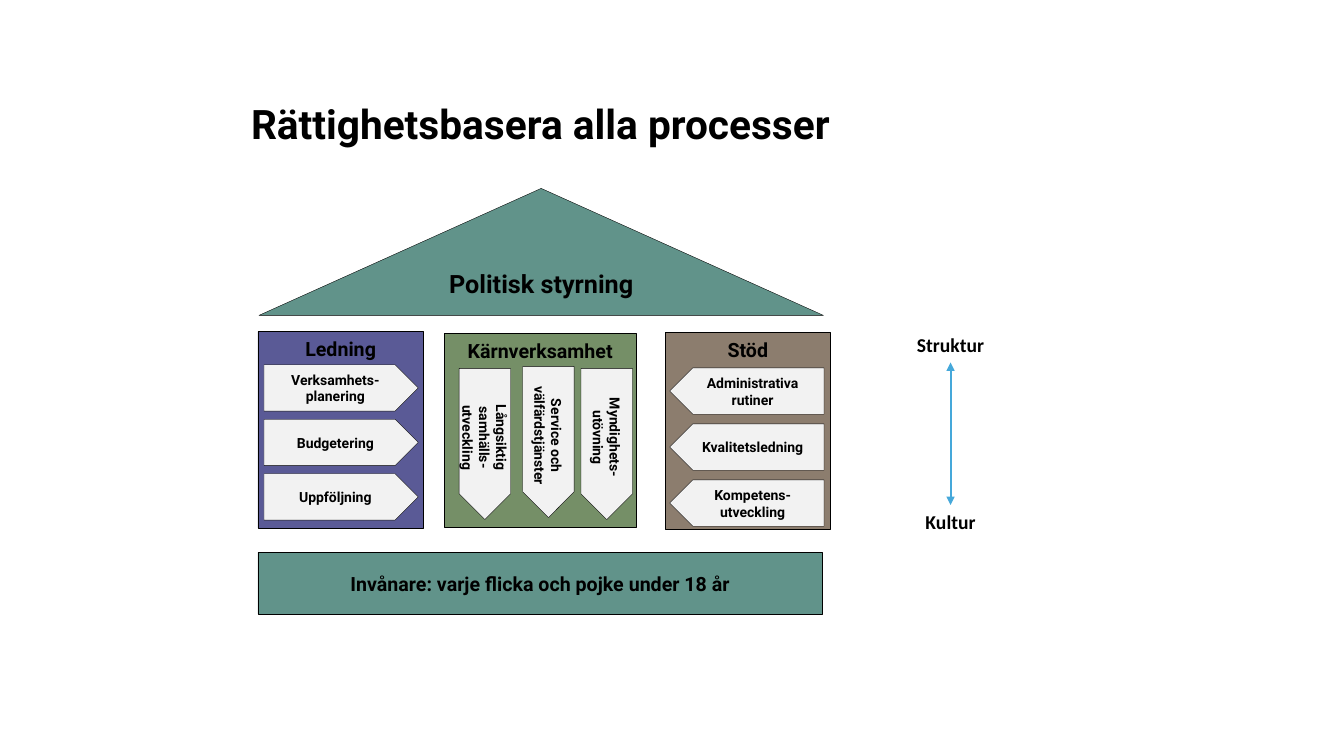
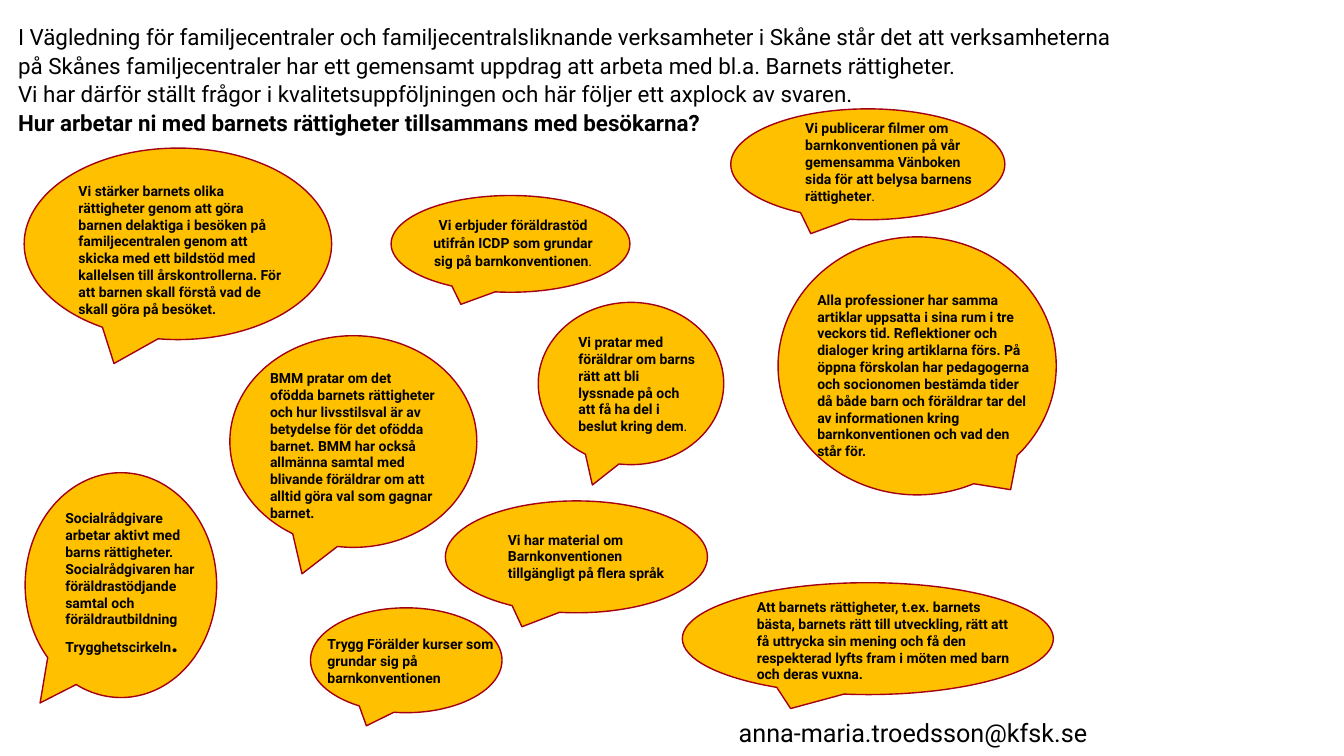
from lxml.etree import SubElement
from pptx import Presentation
from pptx.dml.color import RGBColor
from pptx.enum.shapes import MSO_CONNECTOR, MSO_SHAPE
from pptx.enum.text import MSO_ANCHOR, PP_ALIGN
from pptx.oxml.ns import qn
from pptx.util import Pt

BLACK = RGBColor(0x00, 0x00, 0x00)
TEAL = RGBColor(0x61, 0x93, 0x8A)
PURPLE = RGBColor(0x5A, 0x5A, 0x96)
GREEN = RGBColor(0x75, 0x8F, 0x67)
BROWN = RGBColor(0x8C, 0x7D, 0x6E)
PALE = RGBColor(0xF2, 0xF2, 0xF2)
BLUE = RGBColor(0x45, 0xA8, 0xDA)
YELLOW = RGBColor(0xFF, 0xC0, 0x00)
RED = RGBColor(0xA3, 0x00, 0x13)
FONT = "Roboto"

TITLE = "Rättighetsbasera alla processer"
ROOF = ("Politisk styrning", (185, 134.6, 403.2, 90.7))
BASE = ("Invånare: varje flicka och pojke under 18 år", (184.3, 394.6, 403.2, 43.9))
PILLARS = [
    ("Ledning", PURPLE, (184.3, 236.9, 118.1, 140.4)),
    ("Kärnverksamhet", GREEN, (317.5, 238.3, 136.8, 138.2)),
    ("Stöd", BROWN, (475.2, 237.6, 118.1, 140.4)),
]
PLATE_W, PLATE_H = 110.2, 33.1
SIDE_PLATES = [
    (188.6, 260.6, 38.9, False, ["Verksamhets-planering", "Budgetering", "Uppföljning"]),
    (478.4, 262.8, 40, True,
     ["Administrativa rutiner", "Kvalitetsledning", "Kompetens-utveckling"]),
]
DOWN_W, DOWN_H = 108, 36.7
DOWN_PLATES = [
    ("Långsiktig samhälls-utveckling", 292.3, 298.8),
    ("Service och välfärdstjänster", 337.7, 297.4),
    ("Myndighets-utövning", 379.4, 298.8),
]
AXIS_X, AXIS_H = 679, 24.5
AXIS_ENDS = [("Struktur", 234.4, 63.4), ("Kultur", 360.7, 50.4)]

INTRO = [
    "I Vägledning för familjecentraler och familjecentralsliknande verksamheter i Skåne "
    "står det att verksamheterna",
    "på Skånes familjecentraler har ett gemensamt uppdrag att arbeta med bl.a. "
    "Barnets rättigheter.",
    "Vi har därför ställt frågor i kvalitetsuppföljningen och här följer ett axplock av svaren.",
]
QUESTION = "Hur arbetar ni med barnets rättigheter tillsammans med besökarna?"
EMAIL = "anna-maria.troedsson@kfsk.se"
TAIL = (-0.208, 0.625)
ANSWERS = [
    dict(bubble=(17.3, 105.8, 219.6, 136.8), box=(49, 126.7, 162.7, 92.2),
         text="Vi stärker barnets olika rättigheter genom att göra barnen delaktiga i besöken på "
              "familjecentralen genom att skicka med ett bildstöd med kallelsen till "
              "årskontrollerna. För att barnen skall förstå vad de skall göra på besöket."),
    dict(bubble=(279.4, 139.7, 170.6, 69.1), box=(298.1, 150.5, 136.8, 45.4),
         text="Vi erbjuder föräldrastöd utifrån ICDP som grundar sig på barnkonventionen",
         end=".", align=PP_ALIGN.CENTER, spacing=1.07),
    dict(bubble=(522, 77.8, 195.8, 79.2), box=(568.1, 82.1, 139, 67.7),
         text="Vi publicerar filmer om barnkonventionen på vår gemensamma Vänboken sida "
              "för att belysa barnens rättigheter", end="."),
    dict(bubble=(384.5, 216, 132.5, 115.9), box=(406.1, 234.7, 97.9, 67.7),
         text="Vi pratar med föräldrar om barns rätt att bli lyssnade på och att få ha del i "
              "beslut kring dem", end="."),
    dict(bubble=(164.2, 239.8, 176.4, 151.2), box=(185.8, 260.6, 132.5, 104.4),
         text="BMM pratar om det ofödda barnets rättigheter och hur livsstilsval är av betydelse "
              "för det ofödda barnet. BMM har också allmänna samtal med blivande föräldrar om att "
              "alltid göra val som gagnar barnet."),
    dict(bubble=(18, 337.7, 136.8, 160.6), box=(39.6, 360.7, 110.2, 113.8),
         tail=(-0.422, 0.524), end=".", end_bold=True, end_size=18,
         text="Socialrådgivare arbetar aktivt med barns rättigheter. Socialrådgivaren har "
              "föräldrastödjande samtal och föräldrautbildning Trygghetscirkeln"),
    dict(bubble=(555.8, 169.2, 198.7, 184.3), box=(576.7, 204.5, 169.2, 116.6),
         tail=(0.336, 0.48),
         text="Alla professioner har samma artiklar uppsatta i sina rum i tre veckors tid. "
              "Reflektioner och dialoger kring artiklarna förs. På öppna förskolan har "
              "pedagogerna och socionomen bestämda tider då både barn och föräldrar tar del av "
              "informationen kring barnkonventionen och vad den står för."),
    dict(bubble=(318.2, 357.8, 187.2, 79.9), box=(355.7, 375.8, 144.7, 43.9),
         text="Vi har material om Barnkonventionen tillgängligt på flera språk"),
    dict(bubble=(221.8, 434.2, 136.8, 74.9), box=(226.8, 450.7, 135.4, 43.9),
         text="Trygg Förälder kurser som grundar sig på barnkonventionen"),
    dict(bubble=(487.4, 416.2, 265, 79.9), box=(533.5, 424.1, 195.8, 67.7),
         text="Att barnets rättigheter, t.ex. barnets bästa, barnets rätt till utveckling, rätt "
              "att få uttrycka sin mening och få den respekterad lyfts fram i möten med barn och "
              "deras vuxna."),
]


def pts(rect):
    return [Pt(v) for v in rect]


def style(p, size, bold=True, align=PP_ALIGN.LEFT, font=FONT, spacing=None):
    p.alignment = align
    if spacing:
        p.line_spacing = spacing
    p.font.name, p.font.size, p.font.bold = font, Pt(size), bold
    p.font.color.rgb = BLACK


def add_box(slide, rect, text, size, wrap=True, **look):
    tb = slide.shapes.add_textbox(*pts(rect))
    tb.text_frame.word_wrap = wrap
    p = tb.text_frame.paragraphs[0]
    p.text = text
    style(p, size, **look)
    return tb


def add_figure(slide, kind, rect, fill, line=BLACK, weight=0.25):
    sp = slide.shapes.add_shape(kind, *pts(rect))
    sp.shadow.inherit = False
    sp.fill.solid()
    sp.fill.fore_color.rgb = fill
    sp.line.color.rgb = line
    sp.line.width = Pt(weight)
    return sp


def add_label_shape(slide, kind, rect, fill, text, size, anchor=MSO_ANCHOR.MIDDLE):
    sp = add_figure(slide, kind, rect, fill)
    tf = sp.text_frame
    tf.word_wrap = True
    tf.vertical_anchor = anchor
    tf.text = text
    style(tf.paragraphs[0], size, align=PP_ALIGN.CENTER)
    return sp


def add_double_arrow(slide, top, bottom):
    line = slide.shapes.add_connector(MSO_CONNECTOR.STRAIGHT, 0, 0, 0, 0)
    line.begin_connect(top, 2)
    line.end_connect(bottom, 0)
    line.line.color.rgb = BLUE
    line.line.width = Pt(1.5)
    ln = line.line._get_or_add_ln()
    for end in ("a:headEnd", "a:tailEnd"):
        SubElement(ln, qn(end), type="triangle")
    SubElement(line._element.spPr, qn("a:effectLst"))


def build_house(prs):
    slide = prs.slides.add_slide(prs.slide_layouts[5])
    title = slide.shapes.title
    title.left, title.top, title.width, title.height = pts((88.6, 54.7, 595.4, 70.6))
    title.text_frame.text = TITLE
    title.text_frame.vertical_anchor = MSO_ANCHOR.MIDDLE
    style(title.text_frame.paragraphs[0], 29, align=PP_ALIGN.CENTER, spacing=0.9)

    text, rect = ROOF
    add_label_shape(slide, MSO_SHAPE.ISOSCELES_TRIANGLE, rect, TEAL, text, 18)
    for text, fill, rect in PILLARS:
        add_label_shape(slide, MSO_SHAPE.RECTANGLE, rect, fill, text, 14, MSO_ANCHOR.TOP)
    text, rect = BASE
    add_label_shape(slide, MSO_SHAPE.RECTANGLE, rect, TEAL, text, 14)

    for left, top, step, flipped, labels in SIDE_PLATES:
        for i, text in enumerate(labels):
            rect = (left, top + i * step, PLATE_W, PLATE_H)
            sp = add_label_shape(slide, MSO_SHAPE.PENTAGON, rect, PALE, text, 10)
            if flipped:
                sp._element.spPr.xfrm.set("flipH", "1")
    for text, left, top in DOWN_PLATES:
        rect = (left, top, DOWN_W, DOWN_H)
        add_label_shape(slide, MSO_SHAPE.PENTAGON, rect, PALE, text, 10).rotation = 90

    ends = [add_box(slide, (AXIS_X - w / 2, top, w, AXIS_H), text, 14, wrap=False,
                    align=PP_ALIGN.CENTER, font="Calibri")
            for text, top, w in AXIS_ENDS]
    add_double_arrow(slide, *ends)


def add_answer(slide, bubble, box, text, tail=TAIL, end="", end_bold=False, end_size=10, **look):
    sp = add_figure(slide, MSO_SHAPE.OVAL_CALLOUT, bubble, YELLOW, RED, 1)
    sp.adjustments[0], sp.adjustments[1] = tail
    tb = add_box(slide, box, text, 10, **look)
    if end:
        r = tb.text_frame.paragraphs[0].add_run()
        r.text = end
        r.font.bold, r.font.size = end_bold, Pt(end_size)


def build_answers(prs):
    slide = prs.slides.add_slide(prs.slide_layouts[6])
    intro = add_box(slide, (5.8, 11.5, 833.8, 112.3), "\v".join(INTRO), 16,
                    bold=False, spacing=1.07)
    p = intro.text_frame.paragraphs[0]
    p.add_line_break()
    r = p.add_run()
    r.text = QUESTION
    r.font.bold = True
    add_box(slide, (520.6, 509, 360, 28.8), EMAIL, 18, bold=False)
    for answer in ANSWERS:
        add_answer(slide, **answer)


def main():
    prs = Presentation()
    prs.slide_width, prs.slide_height = Pt(960), Pt(540)
    build_house(prs)
    build_answers(prs)
    prs.save("out.pptx")


if __name__ == "__main__":
    main()
